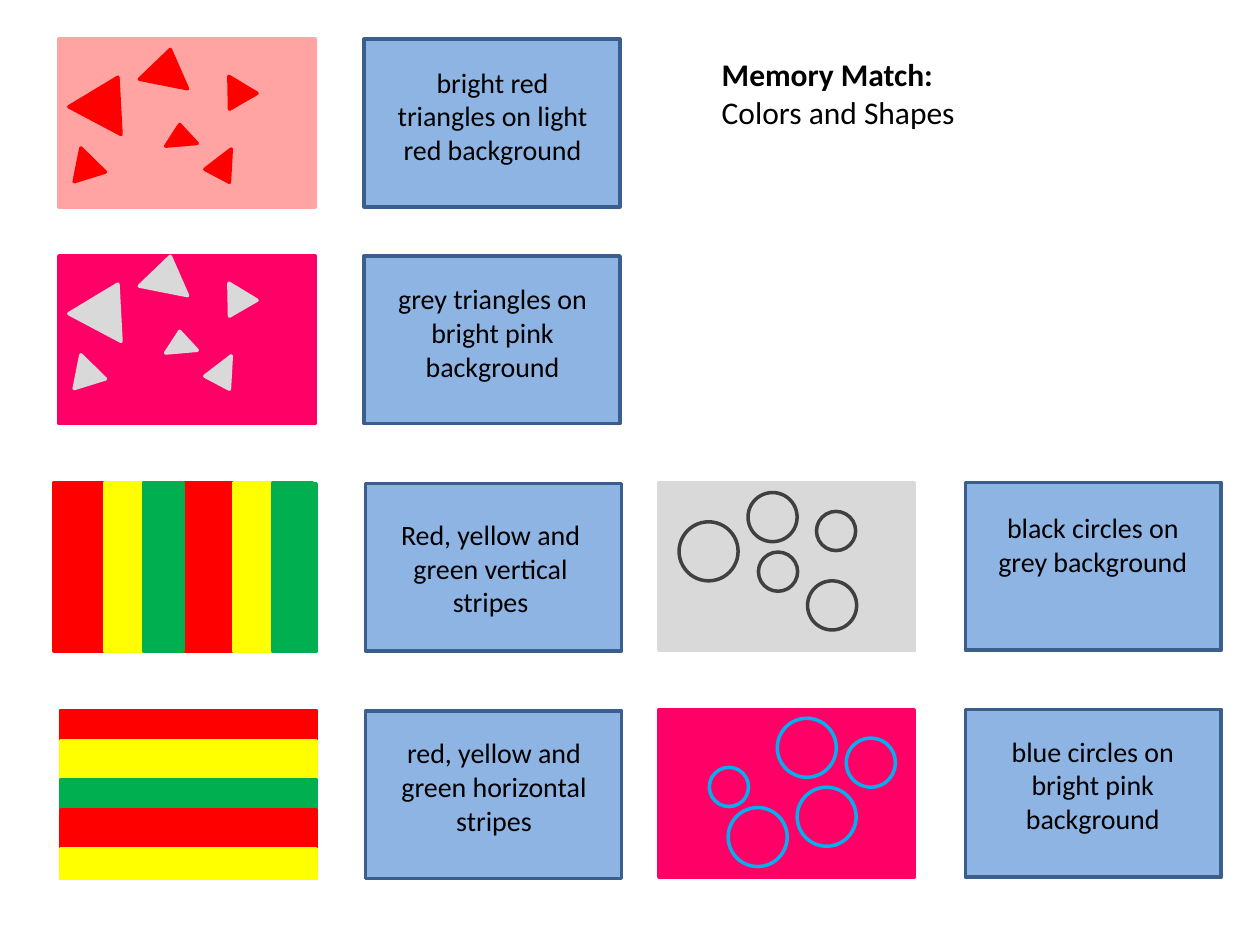
from itertools import accumulate

from pptx import Presentation
from pptx.dml.color import RGBColor
from pptx.enum.shapes import MSO_SHAPE as Shape
from pptx.enum.text import MSO_AUTO_SIZE as AutoSize, PP_ALIGN as Align
from pptx.util import Cm, Pt

COLORS = {
    "light red": "FFA3A3", "red": "FF0000", "pink": "FF0066", "grey": "D9D9D9",
    "yellow": "FFFF00", "green": "00B050", "black": "000000",
    "dark grey": "404040", "sky": "00B0F0", "blue": "8EB4E3", "navy": "3A5F8C",
}
FONT = "Calibri"
CARD_W, CARD_H = 5.16, 3.38
LABEL_W = 4.78

# Picture cards: left, top, colour
backgrounds = [
    (1.19, 0.79, "light red"), (1.19, 5.16, "pink"),
    (1.22, 9.75, "green"), (1.22, 14.33, "red"),
    (13.28, 9.73, "grey"), (13.28, 14.3, "pink"),
]

# Word cards: left, top, label offset in x and y, label height, words
word_cards = [
    (7.34, 0.79, 0.2, 0.4, 2.31, "bright red triangles on light red background"),
    (7.34, 5.16, 0.2, 0.4, 2.31, "grey triangles on bright pink background"),
    (7.37, 9.75, 0.13, 0.56, 2.31, "Red, yellow and green vertical stripes"),
    (7.37, 14.33, 0.2, 0.38, 2.31, "red, yellow and green horizontal stripes"),
    (19.46, 9.73, 0.18, 0.44, 1.7, "black circles on grey background"),
    (19.46, 14.3, 0.18, 0.38, 2.31, "blue circles on bright pink background"),
]

# Triangle pattern: x, y, width, height, rotation; used at each top
triangles = [
    (0.36, 0.51, 1.19, 0.99, 27.9), (2.13, 1.52, 0.64, 0.41, 355.1),
    (1.68, 0, 0.99, 0.71, 11.2), (0.2, 1.98, 0.66, 0.61, 342.8),
    (3.25, 0.51, 0.64, 0.58, 330), (3.05, 1.98, 0.56, 0.61, 27.9),
]
triangle_sets = [(1.19, 5.16, "grey"), (1.19, 0.99, "red")]

# Circles: card left, card top, fill, outline, then x, y, diameter of each
circle_sets = [
    (13.28, 9.73, "grey", "dark grey",
     [(0.41, 0.79, 1.19), (1.8, 0.2, 0.99), (3, 1.98, 0.99),
      (3.18, 0.58, 0.79), (2.01, 1.4, 0.79)]),
    (13.28, 14.3, "pink", "sky",
     [(1.02, 1.17, 0.79), (2.39, 0.18, 1.19), (1.4, 1.98, 1.19),
      (2.79, 1.57, 1.19), (3.78, 0.58, 0.99)]),
]

# Stripes: colour and thickness
rows = [("red", 0.6), ("yellow", 0.79), ("green", 0.6), ("red", 0.79), ("yellow", 0.6)]
columns = [("red", 1.02), ("yellow", 0.79), ("green", 0.79)]

title = [("Memory Match:", True), ("Colors and Shapes", False)]

prs = Presentation()
prs.slide_width, prs.slide_height = Cm(25.4), Cm(19.05)
slide = prs.slides.add_slide(prs.slide_layouts[6])


def rgb(name):
    return RGBColor.from_string(COLORS[name])


def add_figure(kind, x, y, w, h, fill, outline=None, rotation=0):
    figure = slide.shapes.add_shape(kind, Cm(x), Cm(y), Cm(w), Cm(h))
    figure.shadow.inherit = False
    figure.fill.solid()
    figure.fill.fore_color.rgb = rgb(fill)
    figure.line.color.rgb = rgb(outline or fill)
    figure.line.width = Pt(2)
    figure.rotation = rotation


def add_words(x, y, w, h, lines, size, align):
    box = slide.shapes.add_textbox(Cm(x), Cm(y), Cm(w), Cm(h))
    frame = box.text_frame
    frame.word_wrap = True
    frame.auto_size = AutoSize.SHAPE_TO_FIT_TEXT
    for i, (words, bold) in enumerate(lines):
        paragraph = frame.add_paragraph() if i else frame.paragraphs[0]
        paragraph.text = words
        paragraph.alignment = align
        font = paragraph.font
        font.name, font.size, font.bold = FONT, Pt(size), bold
        font.color.rgb = rgb("black")


# Cards
for x, y, color in backgrounds:
    add_figure(Shape.RECTANGLE, x, y, CARD_W, CARD_H, color)
for x, y, dx, dy, label_h, words in word_cards:
    add_figure(Shape.RECTANGLE, x, y, CARD_W, CARD_H, "blue", "navy")
    add_words(x + dx, y + dy, LABEL_W, label_h, [(words, False)], 16, Align.CENTER)

# Triangles and circles
for left, top, color in triangle_sets:
    for x, y, w, h, rotation in triangles:
        add_figure(Shape.ISOSCELES_TRIANGLE, left + x, top + y, w, h, color,
                   rotation=rotation)
for left, top, fill, outline, circles in circle_sets:
    for x, y, d in circles:
        add_figure(Shape.OVAL, left + x, top + y, d, d, fill, outline)

# Horizontal stripes
row_tops = accumulate((h for _, h in rows), initial=14.33)
for (color, h), y in zip(rows, row_tops):
    add_figure(Shape.RECTANGLE, 1.22, y, CARD_W, h, color)

# Vertical stripes: the three colours, each drawn twice
set_w = sum(w for _, w in columns)
column_lefts = accumulate((w for _, w in columns), initial=1.09)
for (color, w), x in zip(columns, column_lefts):
    for repeat in range(2):
        add_figure(Shape.RECTANGLE, x + repeat * set_w, 9.73, w, 3.4, color)

# Title
add_words(14.3, 0.99, 10.11, 1.8, title, 18, Align.LEFT)

prs.save("out.pptx")
